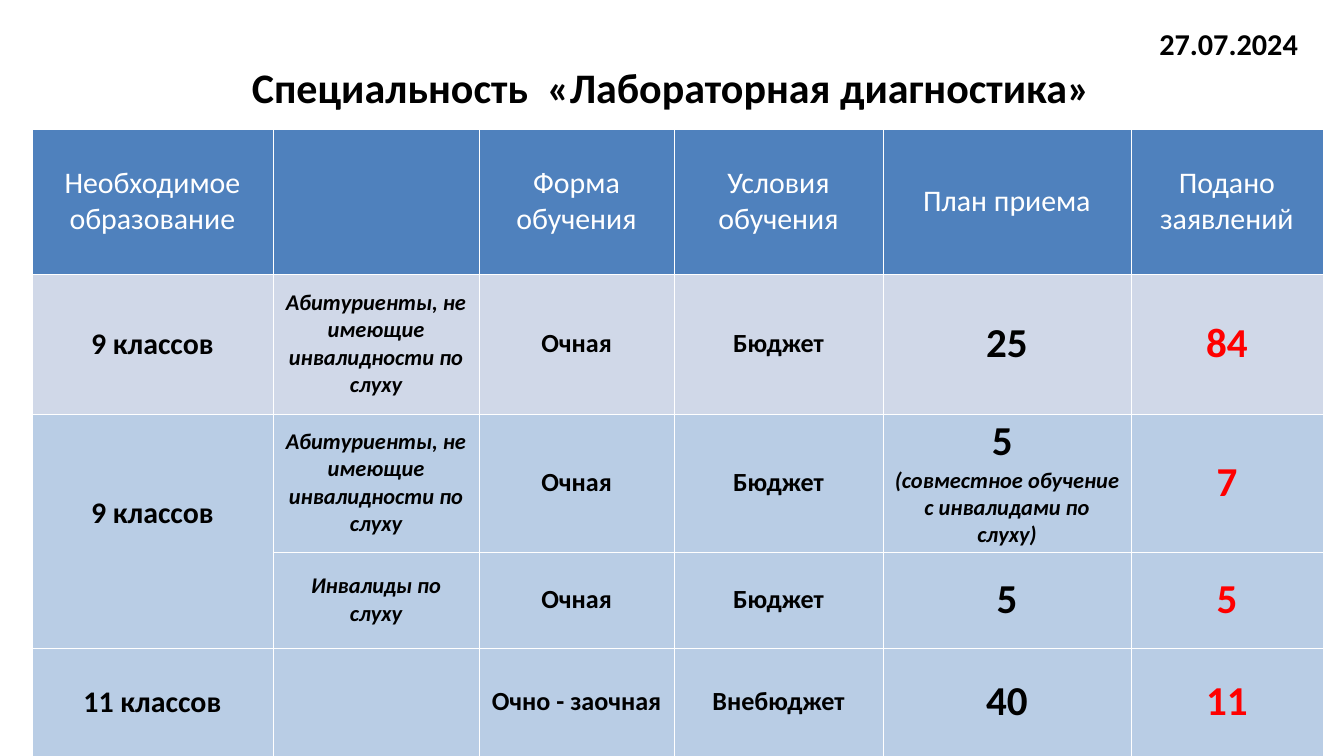
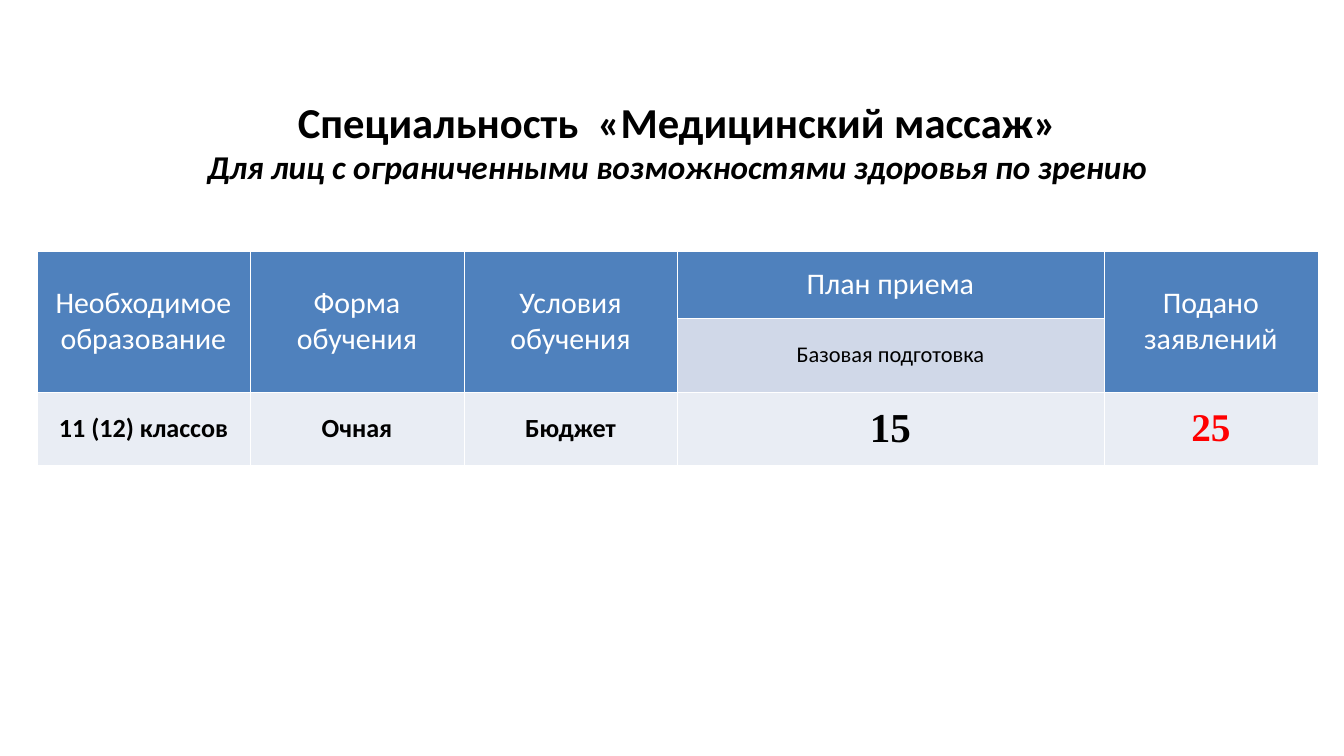
from lxml import etree
from pptx import Presentation, util as u
from pptx.dml.color import RGBColor
from pptx.enum import text
from pptx.oxml import ns

PX = 914400 / 67.2  # EMU in one px
BLACK, WHITE, RED = "000000", "FFFFFF", "FF0000"
HEADER, BAND, SHADE, PALE = "4F81BD", "D0D8E8", "B9CDE5", "E9EDF4"
SANS, SERIF = "Calibri", "Times New Roman"
CENTER, RIGHT = text.PP_ALIGN.CENTER, text.PP_ALIGN.RIGHT


def px(length):
    return u.Emu(round(length * PX))


def write(para, words, size, color=BLACK, bold=True, italic=False, face=SANS, align=CENTER):
    para.text = words
    para.alignment = align
    font = para.font
    font.size, font.bold, font.italic, font.name = u.Pt(size), bold, italic, face
    font.color.rgb = RGBColor.from_string(color)


# Text styles for cells
HEAD = dict(size=32, color=WHITE, bold=False)
CLASSES = dict(size=32)
NOTE = dict(size=24, italic=True)
PLAIN = dict(size=28)
COUNT = dict(size=44)
APPLIED = dict(size=44, color=RED)
TRACK = dict(size=24, bold=False)

DEAF = "Инвалиды по слуху"
HEARING = "Абитуриенты, не имеющие инвалидности по слуху"
EDUCATION, FORM, TERMS = "Необходимое образование", "Форма обучения", "Условия обучения"
PLAN, FILED = "План приема", "Подано\nзаявлений"

# Each row: height, fill, cell styles, cell texts
admission_styles = [CLASSES, NOTE, PLAIN, PLAIN, COUNT, APPLIED]
massage_styles = [PLAIN] * 3 + [dict(size=44, face=SERIF), dict(size=42, color=RED, face=SERIF)]
specialties = [
    dict(
        title_box=(32, 33, 1278, 72),
        title=[
            ("27.07.2024", dict(size=32.4, align=RIGHT)),
            ("Специальность  «Лабораторная диагностика»", dict(size=45)),
        ],
        corner=(32, 129),
        columns=[241, 206, 195, 209, 248, 192],
        rows=[
            (145, HEADER, [HEAD] * 6, [EDUCATION, "", FORM, TERMS, PLAN, FILED]),
            (140, BAND, admission_styles, ["9 классов", HEARING, "Очная", "Бюджет", "25", "84"]),
            (138, SHADE, admission_styles,
             ["9 классов", HEARING, "Очная", "Бюджет",
              "5 \n(совместное обучение с инвалидами по слуху)", "7"]),
            (96, SHADE, admission_styles, ["", DEAF, "Очная", "Бюджет", "5", "5"]),
            (108, SHADE, admission_styles,
             ["11 классов", "", "Очно - заочная", "Внебюджет", "40", "11"]),
        ],
        merged=[(2, 0)],
    ),
    dict(
        title_box=(37, 97, 1281, 88),
        title=[
            ("Специальность  «Медицинский массаж»", dict(size=45.7)),
            ("Для лиц с ограниченными возможностями здоровья по зрению",
             dict(size=35.6, italic=True)),
        ],
        corner=(37, 251),
        columns=[213, 214, 213, 427, 214],
        rows=[
            (67, HEADER, [HEAD] * 5, [EDUCATION, FORM, TERMS, PLAN, FILED]),
            (74, BAND, [TRACK] * 5, ["", "", "", "Базовая подготовка", ""]),
            (73, PALE, massage_styles, ["11 (12) классов", "Очная", "Бюджет", "15", "25"]),
        ],
        merged=[(0, 0), (0, 1), (0, 2), (0, 4)],
    ),
]

deck = Presentation()
deck.slide_width, deck.slide_height = px(1344), px(756)

for specialty in specialties:
    page = deck.slides.add_slide(deck.slide_layouts[6])

    # Title
    box = page.shapes.add_textbox(*map(px, specialty["title_box"]))
    frame = box.text_frame
    frame.word_wrap = True
    frame.vertical_anchor = text.MSO_ANCHOR.MIDDLE
    frame.margin_left = frame.margin_right = px(12)
    frame.margin_top = frame.margin_bottom = px(6)
    for index, (words, style) in enumerate(specialty["title"]):
        para = frame.add_paragraph() if index else frame.paragraphs[0]
        write(para, words, **style)

    # Table grid
    columns, rows = specialty["columns"], specialty["rows"]
    height = sum(row[0] for row in rows)
    left, top = specialty["corner"]
    table = page.shapes.add_table(
        len(rows), len(columns), px(left), px(top), px(sum(columns)), px(height)).table
    table.first_row = table.horz_banding = False
    for column, width in zip(table.columns, columns):
        column.width = px(width)
    for row, col in specialty["merged"]:
        table.cell(row, col).merge(table.cell(row + 1, col))

    # Cells
    for r, (row_height, fill, styles, texts) in enumerate(rows):
        table.rows[r].height = px(row_height)
        for c, (words, style) in enumerate(zip(texts, styles)):
            cell = table.cell(r, c)
            cell.vertical_anchor = text.MSO_ANCHOR.MIDDLE
            cell.margin_left = cell.margin_right = px(10)
            cell.margin_top = cell.margin_bottom = 0
            properties = cell._tc.get_or_add_tcPr()
            for side in ("a:lnL", "a:lnR", "a:lnT", "a:lnB"):
                line = etree.SubElement(properties, ns.qn(side), w=str(u.Pt(1)))
                paint = etree.SubElement(line, ns.qn("a:solidFill"))
                etree.SubElement(paint, ns.qn("a:srgbClr"), val=WHITE)
            cell.fill.solid()
            cell.fill.fore_color.rgb = RGBColor.from_string(fill)
            if not words:
                continue
            for index, part in enumerate(words.split("\n")):
                para = cell.text_frame.add_paragraph() if index else cell.text_frame.paragraphs[0]
                write(para, part, **(NOTE if part.startswith("(") else style))

# The merged "9 классов" label sits a little above the middle
deck.slides[0].shapes[1].table.cell(2, 0).margin_bottom = px(36)

deck.save("out.pptx")
